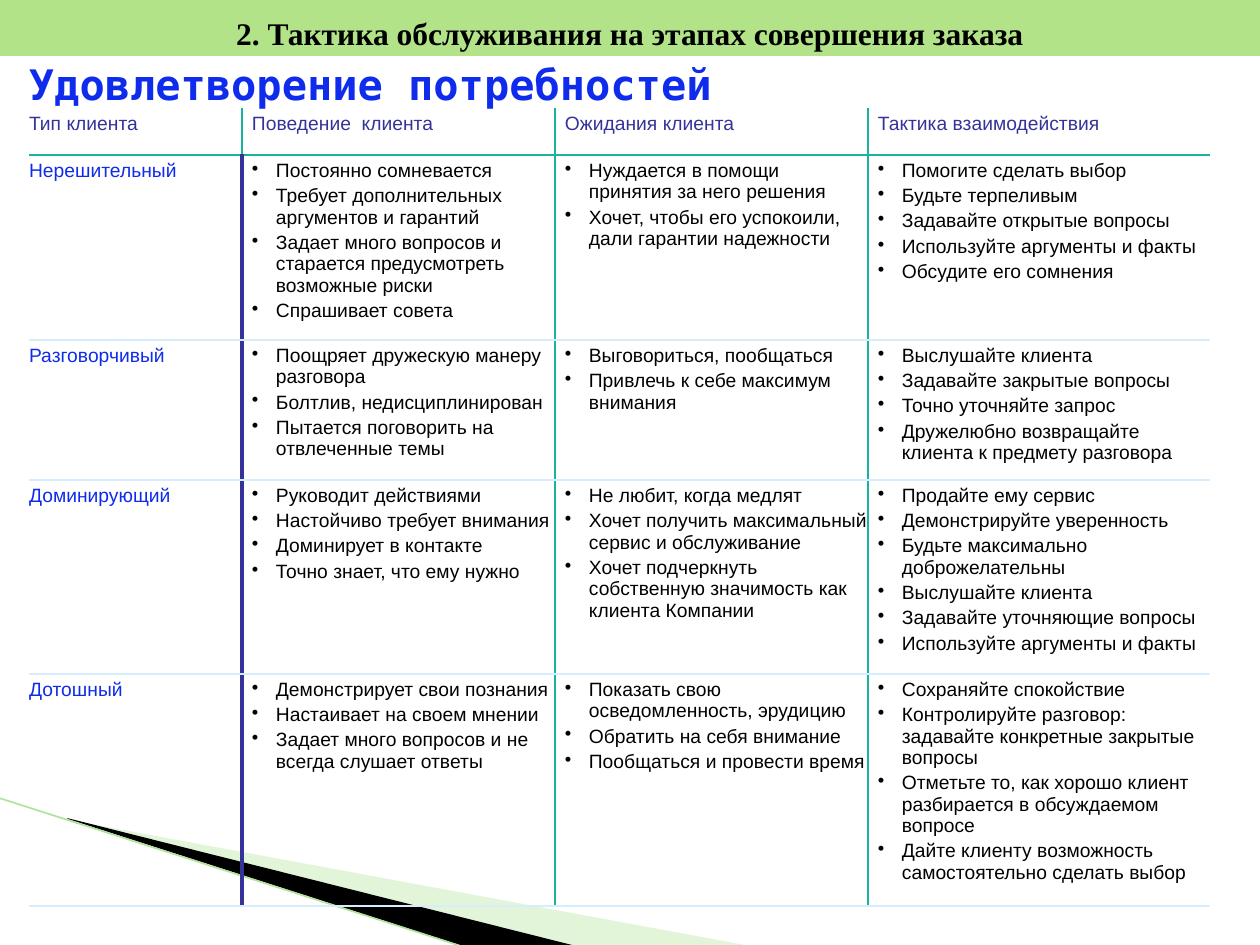
"""Build a slide on service tactics for four types of client."""
from typing import NamedTuple, Optional

from lxml import etree
from pptx import Presentation
from pptx.dml.color import RGBColor
from pptx.enum.shapes import MSO_CONNECTOR, MSO_SHAPE
from pptx.enum.text import MSO_AUTO_SIZE, PP_ALIGN
from pptx.oxml.ns import qn
from pptx.util import Emu, Pt

EMU_PER_PX = 914400 / 126
STRAIGHT = MSO_CONNECTOR.STRAIGHT
RECTANGLE = MSO_SHAPE.RECTANGLE
CENTER = PP_ALIGN.CENTER
GROW = MSO_AUTO_SIZE.SHAPE_TO_FIT_TEXT

BLACK = RGBColor(0x00, 0x00, 0x00)
BLUE = RGBColor(0x0F, 0x2B, 0xEC)
INDIGO = RGBColor(0x33, 0x33, 0x99)
TEAL = RGBColor(0x1A, 0xB3, 0x9F)
PALE_BLUE = RGBColor(0xD6, 0xEC, 0xFF)
BAND_GREEN = RGBColor(0xB2, 0xE3, 0x89)
RAY_GREEN = RGBColor(0xB8, 0xE7, 0xA1)
LINE_GREEN = RGBColor(0xB1, 0xE3, 0x99)


class Border(NamedTuple):
    color: RGBColor
    points: float


class Ray(NamedTuple):
    points: list[tuple[int, int]]
    color: RGBColor
    opacity: int


class Client(NamedTuple):
    kind: str
    behaviour: list[str]
    expectations: list[str]
    tactics: list[str]


GRID = Border(TEAL, 1)
ROW_RULE = Border(PALE_BLUE, 1)
KIND_RULE = Border(INDIGO, 2.25)
COLUMN_WIDTHS = [213, 313, 313, 342]
ROW_HEIGHTS = [47, 185, 140, 194, 232]
HEADINGS = ["Тип клиента", "Поведение  клиента", "Ожидания клиента", "Тактика взаимодействия"]

RAYS = [
    Ray([(69, 820), (750, 946), (575, 946), (69, 819)], RAY_GREEN, 40),
    Ray([(67, 818), (576, 946), (469, 948), (68, 819)], BLACK, 100),
]

CLIENTS = [
    Client(
        "Нерешительный",
        ["Постоянно сомневается", "Требует дополнительных аргументов и гарантий",
         "Задает много вопросов и старается предусмотреть возможные риски", "Спрашивает совета"],
        ["Нуждается в помощи принятия за него решения",
         "Хочет, чтобы его успокоили, дали гарантии надежности"],
        ["Помогите сделать выбор", "Будьте терпеливым", "Задавайте открытые вопросы",
         "Используйте аргументы и факты", "Обсудите его сомнения"],
    ),
    Client(
        "Разговорчивый",
        ["Поощряет дружескую манеру разговора", "Болтлив, недисциплинирован",
         "Пытается поговорить на отвлеченные темы"],
        ["Выговориться, пообщаться", "Привлечь к себе максимум внимания"],
        ["Выслушайте клиента", "Задавайте закрытые вопросы", "Точно уточняйте запрос",
         "Дружелюбно возвращайте клиента к предмету разговора"],
    ),
    Client(
        "Доминирующий",
        ["Руководит действиями", "Настойчиво требует внимания", "Доминирует в контакте",
         "Точно знает, что ему нужно"],
        ["Не любит, когда медлят", "Хочет получить максимальный сервис и обслуживание",
         "Хочет подчеркнуть собственную значимость как клиента Компании"],
        ["Продайте ему сервис", "Демонстрируйте уверенность",
         "Будьте максимально доброжелательны", "Выслушайте клиента",
         "Задавайте уточняющие вопросы", "Используйте аргументы и факты"],
    ),
    Client(
        "Дотошный",
        ["Демонстрирует свои познания", "Настаивает на своем мнении",
         "Задает много вопросов и не всегда слушает ответы"],
        ["Показать свою осведомленность, эрудицию", "Обратить на себя внимание",
         "Пообщаться и провести время"],
        ["Сохраняйте спокойствие",
         "Контролируйте разговор: задавайте конкретные закрытые вопросы",
         "Отметьте то, как хорошо клиент разбирается в обсуждаемом вопросе",
         "Дайте клиенту возможность самостоятельно сделать выбор"],
    ),
]


def px(length: int) -> Emu:
    return Emu(round(length * EMU_PER_PX))


def style(para, font_name: str, size: float, color: RGBColor, bold: bool = False) -> None:
    para.font.name = font_name
    para.font.size = Pt(size)
    para.font.bold = bold
    para.font.color.rgb = color


def draw_ray(page, ray: Ray) -> None:
    builder = page.shapes.build_freeform(*ray.points[0], scale=EMU_PER_PX)
    builder.add_line_segments(ray.points[1:], close=True)
    shape = builder.convert_to_shape()
    shape.shadow.inherit = False
    shape.line.fill.background()
    shape.fill.solid()
    shape.fill.fore_color.rgb = ray.color
    if ray.opacity < 100:
        color = shape.fill._xPr.find(qn("a:solidFill"))[0]
        etree.SubElement(color, qn("a:alpha"), val=str(ray.opacity * 1000))


def draw_edge_line(page) -> None:
    line = page.shapes.add_connector(STRAIGHT, px(-1), px(798), px(467), px(948))
    line.line.color.rgb = LINE_GREEN
    line.line.width = Pt(0.95)
    etree.SubElement(line._element.spPr, qn("a:effectLst"))


def draw_titles(page) -> None:
    band = page.shapes.add_shape(RECTANGLE, 0, 0, px(1260), px(56))
    band.shadow.inherit = False
    band.fill.solid()
    band.fill.fore_color.rgb = BAND_GREEN
    band.line.fill.background()
    band.text_frame.word_wrap = True
    band.text_frame.auto_size = GROW
    para = band.text_frame.paragraphs[0]
    para.text = "2. Тактика обслуживания на этапах совершения заказа"
    para.alignment = CENTER
    para.line_spacing = 1.25
    style(para, "Times New Roman", 18, BLACK, bold=True)

    box = page.shapes.add_textbox(px(29), px(59), px(1171), px(76))
    frame = box.text_frame
    frame.word_wrap = True
    frame.margin_left = frame.margin_right = frame.margin_top = frame.margin_bottom = 0
    frame.paragraphs[0].text = "Удовлетворение потребностей"
    style(frame.paragraphs[0], "DejaVu Sans Mono", 24, BLUE, bold=True)


def vertical_border(row: int, boundary: int) -> Optional[Border]:
    if boundary in (0, len(COLUMN_WIDTHS)):
        return None
    return KIND_RULE if boundary == 1 and row > 0 else GRID


def horizontal_border(boundary: int) -> Optional[Border]:
    return {0: None, 1: GRID}.get(boundary, ROW_RULE)


def set_border(cell, side: str, border: Optional[Border]) -> None:
    properties = cell._tc.get_or_add_tcPr()
    line = etree.SubElement(properties, qn(f"a:ln{side}"))
    if border is None:
        etree.SubElement(line, qn("a:noFill"))
        return
    line.set("w", str(Pt(border.points)))
    fill = etree.SubElement(line, qn("a:solidFill"))
    etree.SubElement(fill, qn("a:srgbClr"), val=str(border.color))


def fill_cell(cell, texts: list[str], color: RGBColor, bulleted: bool) -> None:
    cell.text_frame.text = "\n".join(texts)
    for index, para in enumerate(cell.text_frame.paragraphs):
        if bulleted:
            properties = para._p.get_or_add_pPr()
            properties.set("marL", str(px(24)))
            properties.set("indent", str(px(-24)))
            etree.SubElement(properties, qn("a:buChar"), char="•")
        if index:
            para.space_before = Pt(2.2)
        style(para, "Arial", 11, color)


def draw_table(page) -> None:
    rows = [[[heading] for heading in HEADINGS]]
    rows += [[[client.kind], *client[1:]] for client in CLIENTS]
    frame = page.shapes.add_table(len(rows), len(HEADINGS), px(29), px(108),
                                  px(sum(COLUMN_WIDTHS)), px(sum(ROW_HEIGHTS)))
    table = frame.table
    table.first_row = table.horz_banding = False
    for column, width in zip(table.columns, COLUMN_WIDTHS):
        column.width = px(width)
    for r, (height, contents) in enumerate(zip(ROW_HEIGHTS, rows)):
        table.rows[r].height = px(height)
        for c, texts in enumerate(contents):
            cell = table.cell(r, c)
            cell.margin_top = cell.margin_bottom = px(5)
            cell.margin_left, cell.margin_right = (px(10), 0) if c else (0, px(10))
            set_border(cell, "L", vertical_border(r, c))
            set_border(cell, "R", vertical_border(r, c + 1))
            set_border(cell, "T", horizontal_border(r))
            set_border(cell, "B", horizontal_border(r + 1))
            cell.fill.background()
            color = INDIGO if r == 0 else BLACK if c else BLUE
            fill_cell(cell, texts, color, bulleted=r > 0 and c > 0)


def main() -> None:
    deck = Presentation()
    deck.slide_width, deck.slide_height = px(1260), px(945)
    page = deck.slides.add_slide(deck.slide_layouts[6])
    for ray in RAYS:
        draw_ray(page, ray)
    draw_edge_line(page)
    draw_titles(page)
    draw_table(page)
    deck.save("out.pptx")


if __name__ == "__main__":
    main()
